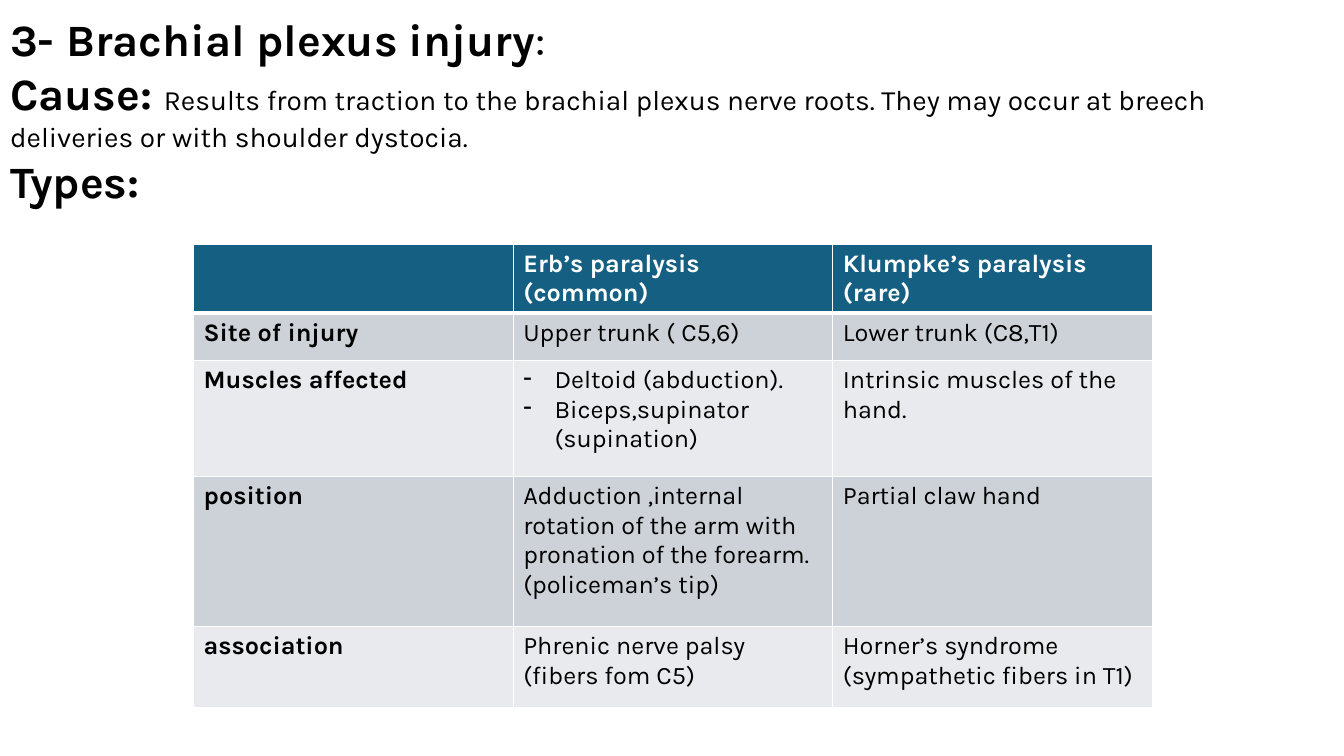
"""Build a slide on brachial plexus injury with a comparison table."""
from lxml.etree import SubElement
from pptx import Presentation
from pptx.dml.color import RGBColor
from pptx.enum.text import MSO_ANCHOR, MSO_AUTO_SIZE, PP_ALIGN
from pptx.oxml.ns import qn
from pptx.util import Inches, Pt

BLACK = RGBColor(0x00, 0x00, 0x00)
WHITE = RGBColor(0xFF, 0xFF, 0xFF)
TEAL = RGBColor(0x15, 0x60, 0x82)
BAND_DARK = RGBColor(0xCC, 0xD2, 0xD8)
BAND_LIGHT = RGBColor(0xE8, 0xEA, 0xED)


def add_run(p, text, size, bold, color=BLACK):
    r = p.add_run()
    r.text = text
    r.font.name = "Karla"
    r.font.size = Pt(size)
    r.font.bold = bold
    r.font.color.rgb = color


def add_border(cell, side, width):
    ln = SubElement(cell._tc.get_or_add_tcPr(), qn(f"a:ln{side}"), w=str(Pt(width)))
    fill = SubElement(ln, qn("a:solidFill"))
    SubElement(fill, qn("a:srgbClr"), val=str(WHITE))


prs = Presentation()
prs.slide_width, prs.slide_height = Inches(13.33), Inches(7.5)
s = prs.slides.add_slide(prs.slide_layouts[5])

title = s.shapes.title
title.left, title.top = Inches(0), Inches(0.07)
title.width, title.height = Inches(13.19), Inches(2.36)
tf = title.text_frame
tf.word_wrap = True
tf.auto_size = MSO_AUTO_SIZE.NONE
tf.vertical_anchor = MSO_ANCHOR.TOP

heading = [
    [("3- Brachial plexus injury", 32, True), (":", 32, False)],
    [("Cause: ", 32, True),
     ("Results from traction to the brachial plexus nerve roots. They may occur at breech "
      "deliveries or with shoulder dystocia.", 20, False)],
    [("Types:", 32, True)],
]
for i, runs in enumerate(heading):
    p = tf.add_paragraph() if i else tf.paragraphs[0]
    p.alignment = PP_ALIGN.LEFT
    for text, size, bold in runs:
        add_run(p, text, size, bold)

rows = [
    (0.61, [], ["Erb’s paralysis (common)"], ["Klumpke’s paralysis (rare)"]),
    (0.47, ["Site of injury"], ["Upper trunk ( C5,6)"], ["Lower trunk (C8,T1)"]),
    (1.15, ["Muscles affected"], ["Deltoid (abduction).", "Biceps,supinator (supination)"],
     ["Intrinsic muscles of the hand."]),
    (1.49, ["position"],
     ["Adduction ,internal rotation of the arm with pronation of the forearm.",
      "(policeman’s tip)"], ["Partial claw hand"]),
    (0.8, ["association"], ["Phrenic nerve palsy (fibers fom C5)"],
     ["Horner’s syndrome (sympathetic fibers in T1)"]),
]
bulleted = (2, 1)
table = s.shapes.add_table(len(rows), 3, Inches(1.92), Inches(2.42),
                           Inches(9.5), Inches(4.52)).table
for col in table.columns:
    col.width = Inches(3.17)

for i, (height, *texts) in enumerate(rows):
    table.rows[i].height = Inches(height)
    header = i == 0
    for j, lines in enumerate(texts):
        cell = table.cell(i, j)
        for side in "LRTB":
            add_border(cell, side, 3 if header and side == "B" else 1)
        cell.fill.solid()
        cell.fill.fore_color.rgb = TEAL if header else BAND_DARK if i % 2 else BAND_LIGHT
        for k, line in enumerate(lines):
            p = cell.text_frame.add_paragraph() if k else cell.text_frame.paragraphs[0]
            add_run(p, line, 18, header or j == 0, WHITE if header else BLACK)
            if (i, j) == bulleted:
                pPr = p._p.get_or_add_pPr()
                pPr.set("marL", str(Inches(0.31)))
                pPr.set("indent", str(-Inches(0.31)))
                SubElement(pPr, qn("a:buChar"), char="-")

prs.save("out.pptx")
